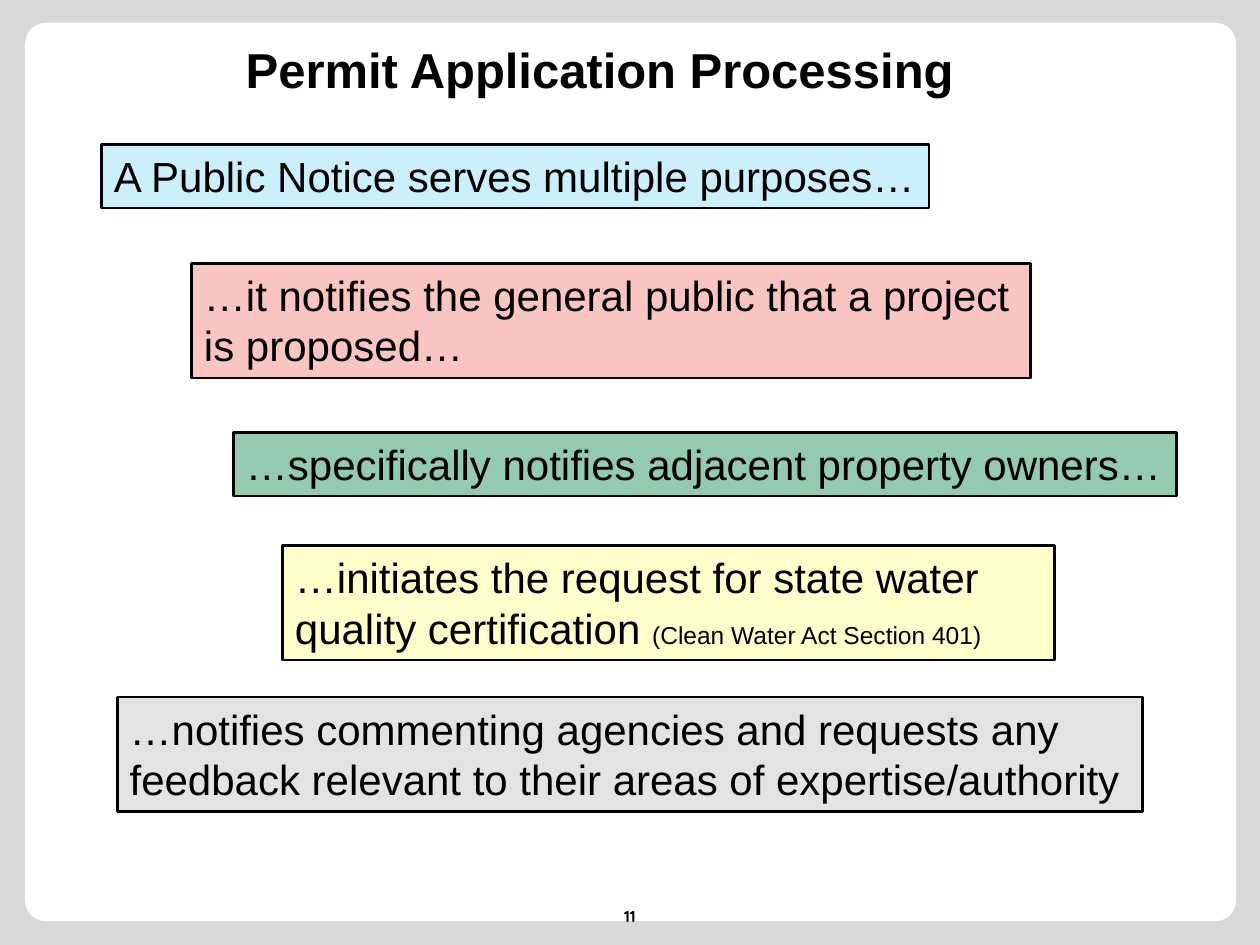
from lxml import etree
from pptx import Presentation
from pptx.dml.color import RGBColor
from pptx.enum import shapes, text
from pptx.oxml import ns
from pptx.util import Pt

BLACK = RGBColor(0, 0, 0)
WHITE = RGBColor(255, 255, 255)
GREY = RGBColor(0xD8, 0xD8, 0xD8)
BLUE = RGBColor(0x00, 0xB0, 0xF0)
RED = RGBColor(0xF5, 0x8D, 0x86)
GREEN = RGBColor(0x29, 0x97, 0x63)
YELLOW = RGBColor(0xFF, 0xFF, 0x00)

SLIDE_W, SLIDE_H = 720, 540
ONE_LINE, TWO_LINES = 36.35, 65.45

# Each paragraph is a list of (wording, size) runs
STATEMENTS = [
    # box, fill, opacity in percent, wrap, paragraphs
    ((58, 82.6, 473, ONE_LINE), BLUE, 20, False,
     [[("A Public Notice serves multiple purposes…", 24)]]),
    ((109.5, 150.5, 479.5, TWO_LINES), RED, 50, False,
     [[("…it notifies the general public that a project", 24)],
      [("is proposed…", 24)]]),
    ((133.5, 247.2, 538.7, ONE_LINE), GREEN, 50, False,
     [[("…specifically notifies adjacent property owners…", 24)]]),
    ((161.5, 311.8, 441, TWO_LINES), YELLOW, 20, True,
     [[("…initiates the request for state water quality certification ", 24),
       ("(Clean Water Act Section 401)", 14)]]),
    ((67, 398.2, 586, TWO_LINES), GREY, 70, False,
     [[("…notifies commenting agencies and requests any", 24)],
      [("feedback relevant to their areas of expertise/authority", 24)]]),
]


def points(box):
    return [Pt(value) for value in box]


def write(frame, paragraphs, font="Arial", bold=False, wrap=True,
          align=text.PP_ALIGN.LEFT, fit=text.MSO_AUTO_SIZE.NONE):
    frame.word_wrap = wrap
    frame.auto_size = fit
    frame.vertical_anchor = text.MSO_ANCHOR.TOP
    for index, runs in enumerate(paragraphs):
        paragraph = frame.add_paragraph() if index else frame.paragraphs[0]
        paragraph.alignment = align
        for wording, size in runs:
            run = paragraph.add_run()
            run.text = wording
            run.font.name, run.font.size, run.font.bold = font, Pt(size), bold
            run.font.color.rgb = BLACK


def add_panel(slide, box):
    slide.background.fill.solid()
    slide.background.fill.fore_color.rgb = GREY
    panel = slide.shapes.add_shape(shapes.MSO_SHAPE.ROUNDED_RECTANGLE, *points(box))
    panel.adjustments[0] = 0.023
    panel.shadow.inherit = False
    panel.fill.solid()
    panel.fill.fore_color.rgb = WHITE
    panel.line.fill.background()
    # Send the panel behind the title
    tree = slide.shapes.element
    tree.remove(panel.element)
    tree.insert(2, panel.element)


def add_title(slide, box):
    title = slide.shapes.title
    title.left, title.top, title.width, title.height = points(box)
    write(title.text_frame, [[("Permit Application Processing", 28)]],
          bold=True, wrap=False)


def add_statement(slide, box, colour, opacity, wrap, paragraphs):
    statement = slide.shapes.add_shape(shapes.MSO_SHAPE.RECTANGLE, *points(box))
    statement.shadow.inherit = False
    statement.fill.solid()
    statement.fill.fore_color.rgb = colour
    tint = statement.element.spPr.find(ns.qn("a:solidFill"))[0]
    etree.SubElement(tint, ns.qn("a:alpha")).set("val", str(opacity * 1000))
    statement.line.color.rgb = BLACK
    statement.line.width = Pt(1.5)
    write(statement.text_frame, paragraphs, wrap=wrap,
          fit=text.MSO_AUTO_SIZE.SHAPE_TO_FIT_TEXT)


def add_page_number(slide, box):
    number = slide.shapes.add_textbox(*points(box))
    write(number.text_frame, [[("11", 9)]], font="Quicksand", bold=True,
          align=text.PP_ALIGN.CENTER)


def main():
    deck = Presentation()
    deck.slide_width, deck.slide_height = Pt(SLIDE_W), Pt(SLIDE_H)
    slide = deck.slides.add_slide(deck.slide_layouts[5])
    add_panel(slide, (14.4, 13, 692, 513.4))
    add_title(slide, (133.2, 18.7, 432, 41))
    for statement in STATEMENTS:
        add_statement(slide, *statement)
    add_page_number(slide, (0, 514.8, SLIDE_W, 27.4))
    deck.save("out.pptx")


if __name__ == "__main__":
    main()
